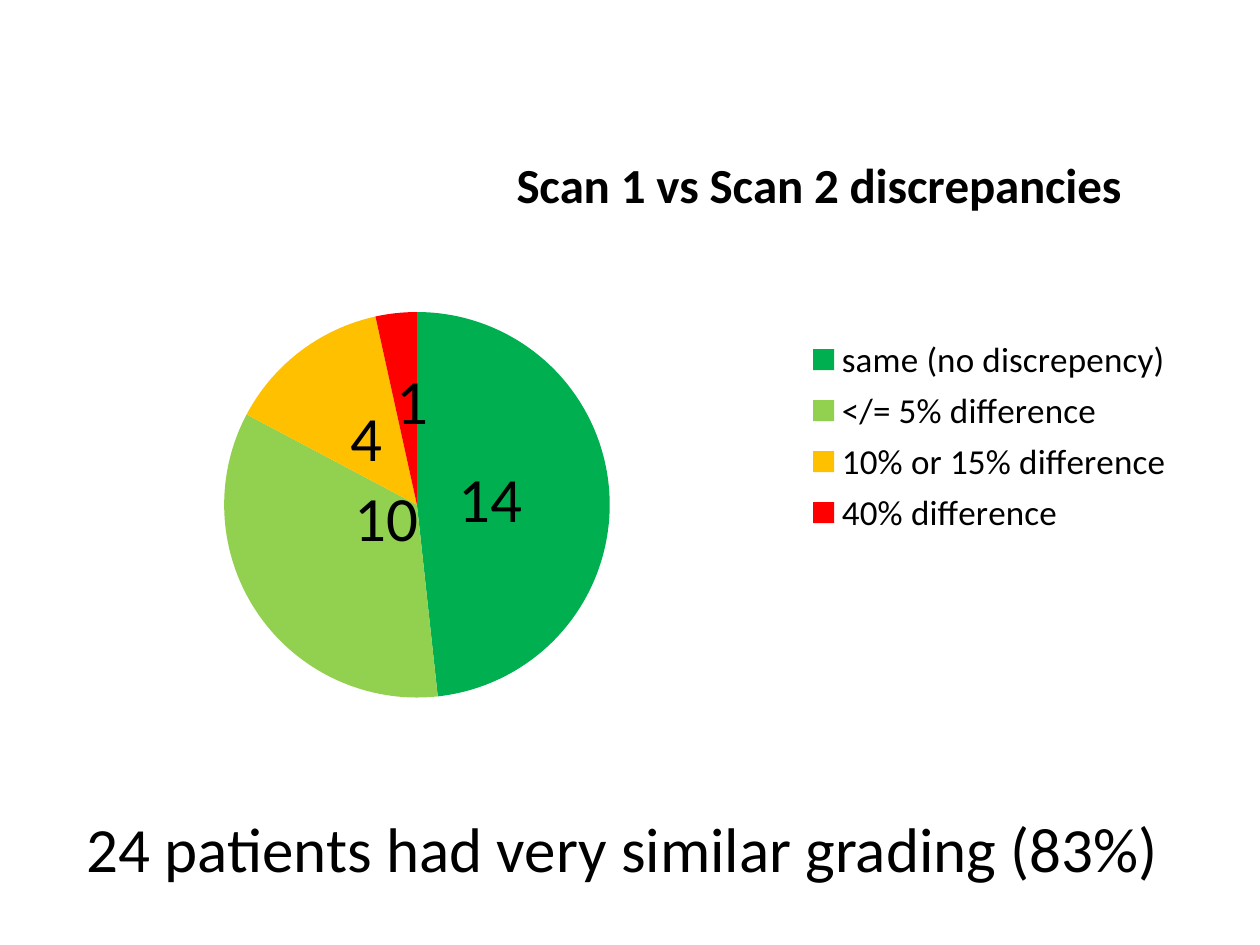
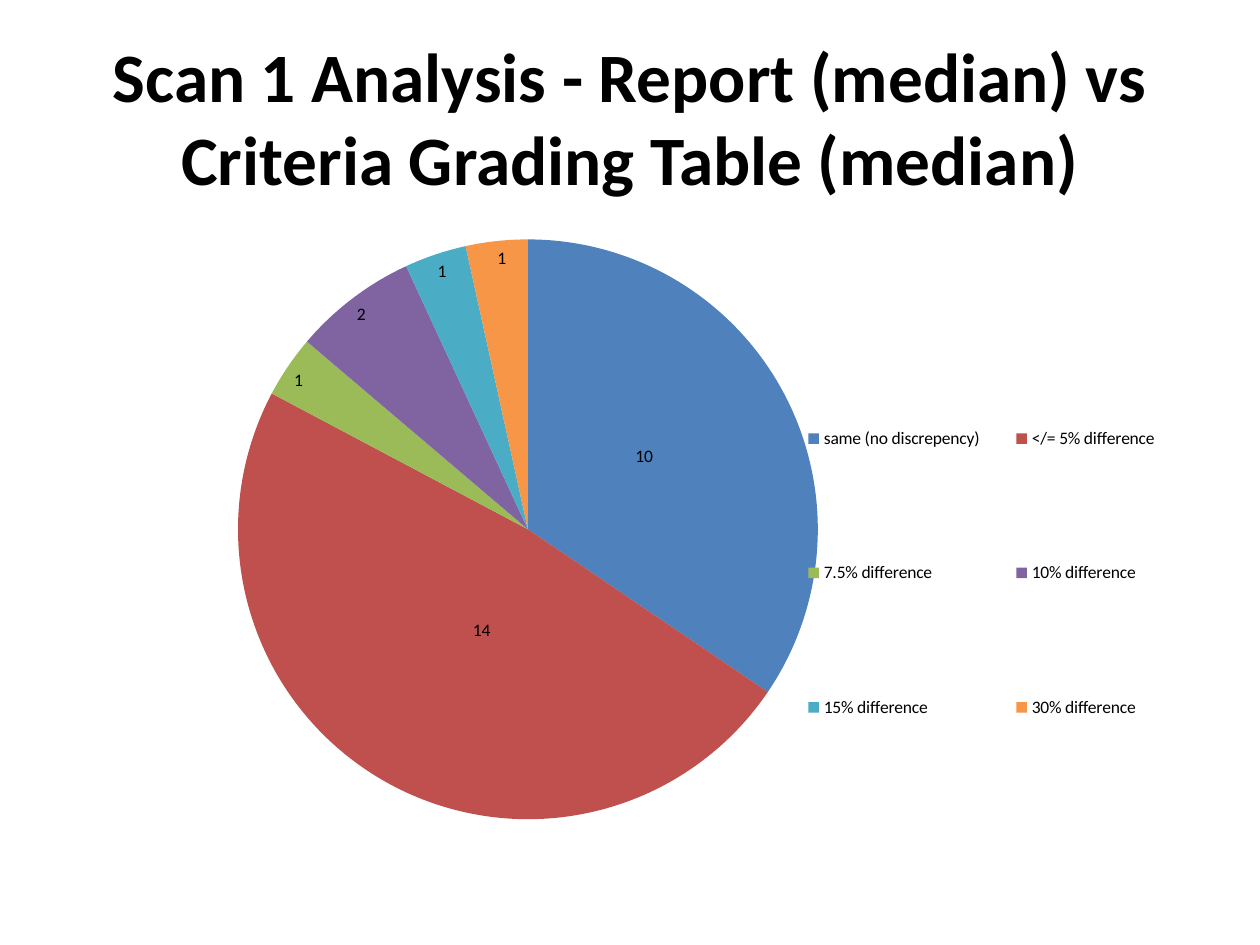
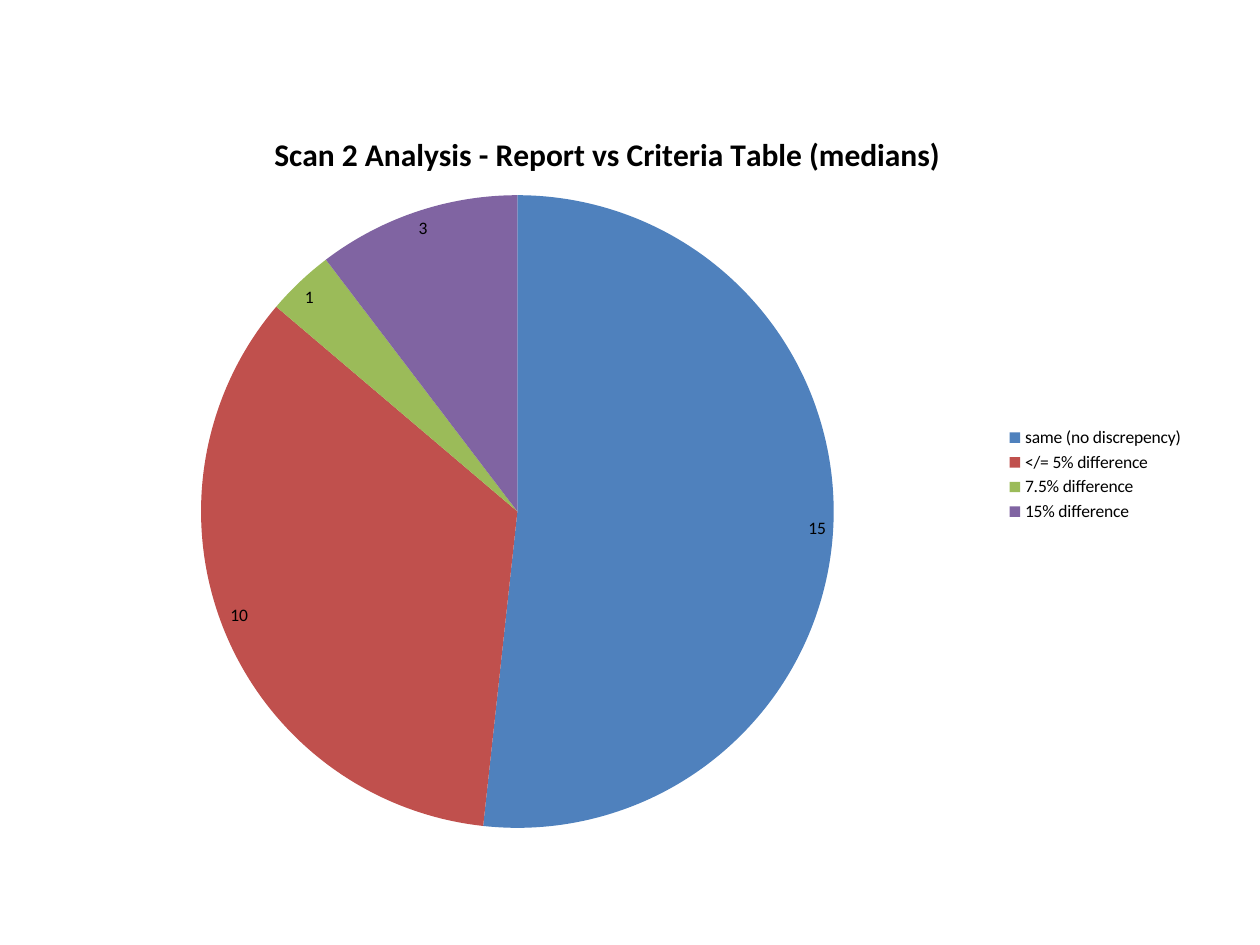
from lxml import etree
from pptx import Presentation
from pptx import util as u
from pptx.chart.data import CategoryChartData
from pptx.dml.color import RGBColor
from pptx.enum import chart as charts, text
from pptx.oxml.ns import qn

FONT = "Calibri"
BLACK = RGBColor(0x00, 0x00, 0x00)
TRAFFIC_LIGHT = [
    RGBColor(0x00, 0xB0, 0x50), RGBColor(0x92, 0xD0, 0x50),
    RGBColor(0xFF, 0xC0, 0x00), RGBColor(0xFF, 0x00, 0x00),
]
ACCENTS = [
    RGBColor(0x4F, 0x81, 0xBD), RGBColor(0xC0, 0x50, 0x4D),
    RGBColor(0x9B, 0xBB, 0x59), RGBColor(0x80, 0x64, 0xA2),
    RGBColor(0x4B, 0xAC, 0xC6), RGBColor(0xF7, 0x96, 0x46),
]
SAME, WITHIN_5 = "same (no discrepency)", "</= 5% difference"

# Boxes are in cm; chart layouts and label shifts are fractions of the chart
SLIDES = [
    dict(
        heading=("24 patients had very similar grading (83%)", 36, False),
        heading_box=(1.12, 15.49, 22.86, 3.18),
        chart_box=(1.09, 2.51, 22.86, 12.57),
        title=("Scan 1 vs Scan 2 discrepancies", 28),
        title_layout=(0.4, 0.03),
        values={SAME: 14, WITHIN_5: 10, "10% or 15% difference": 4,
                "40% difference": 1},
        colours=TRAFFIC_LIGHT, label_size=36, legend_size=20,
        pie_layout=(0.15, 0.3, 0.34, 0.62),
        legend_layout=(0.66, 0.33, 0.33, 0.34),
        label_shifts=[(-0.07, 0.01), (0.08, -0.08), (0.04, 0.07), (0, 0.07)],
    ),
    dict(
        heading=("Scan 1 Analysis - Report (median) vs "
                 "Criteria Grading Table (median)", 39.6, True),
        heading_box=(1.27, 0.76, 22.86, 3.18),
        chart_box=(1.27, 4.45, 22.86, 12.57),
        values={SAME: 10, WITHIN_5: 14, "7.5% difference": 1,
                "10% difference": 2, "15% difference": 1, "30% difference": 1},
        colours=ACCENTS, label_size=10, legend_size=10,
        pie_layout=(0.15, 0.03, 0.52, 0.93),
        legend_layout=(0.63, 0.15, 0.36, 0.83),
        label_shifts=[(-0.11, 0.08), (0.08, -0.21)],
    ),
    dict(
        chart_box=(0.51, 2.13, 23.62, 14.88),
        title=("Scan 2 Analysis - Report vs Criteria Table (medians) ", 18),
        values={SAME: 15, WITHIN_5: 10, "7.5% difference": 1,
                "15% difference": 3},
        colours=ACCENTS, label_size=10, legend_size=10,
        pie_layout=(0.15, 0.12, 0.54, 0.86),
    ),
]


def style(font, size, bold=False):
    font.name, font.size, font.bold = FONT, u.Pt(size), bold
    font.color.rgb = BLACK


def set_layout(element, position, fractions, edge=True, inner=False):
    """Give a chart part a manual layout as its child number `position`."""
    for old in element.findall(qn("c:layout")):
        element.remove(old)
    layout = etree.Element(qn("c:layout"))
    manual = etree.SubElement(layout, qn("c:manualLayout"))
    settings = [("layoutTarget", "inner")] if inner else []
    if edge:
        settings += [("xMode", "edge"), ("yMode", "edge")]
    settings += zip("xywh", fractions)
    for name, value in settings:
        etree.SubElement(manual, qn("c:" + name)).set("val", str(value))
    element.insert(position, layout)


presentation = Presentation()
presentation.slide_width, presentation.slide_height = u.Cm(25.4), u.Cm(19.05)

for content in SLIDES:
    slide = presentation.slides.add_slide(presentation.slide_layouts[6])

    # Heading
    if "heading" in content:
        wording, size, bold = content["heading"]
        heading = slide.shapes.add_textbox(*map(u.Cm, content["heading_box"]))
        frame = heading.text_frame
        frame.word_wrap = True
        frame.vertical_anchor = text.MSO_ANCHOR.MIDDLE
        paragraph = frame.paragraphs[0]
        paragraph.alignment = text.PP_ALIGN.CENTER
        run = paragraph.add_run()
        run.text = wording
        style(run.font, size, bold)

    # Pie chart
    data = CategoryChartData()
    data.categories = list(content["values"])
    data.add_series("Series 1", list(content["values"].values()))
    chart = slide.shapes.add_chart(
        charts.XL_CHART_TYPE.PIE, *map(u.Cm, content["chart_box"]), data).chart
    style(chart.font, 10)
    plot = chart.plots[0]
    plot.vary_by_categories = True
    series = plot.series[0]
    for index in range(len(content["values"])):
        fill = series.points[index].format.fill
        fill.solid()
        fill.fore_color.rgb = content["colours"][index]
    plot_area = chart._chartSpace.chart.plotArea
    set_layout(plot_area, 0, content["pie_layout"], inner=True)

    # Chart title
    chart.has_title = "title" in content
    if chart.has_title:
        wording, size = content["title"]
        title = chart.chart_title
        run = title.text_frame.paragraphs[0].add_run()
        run.text = wording
        style(run.font, size, bold=True)
        title.include_in_layout = False
        if "title_layout" in content:
            set_layout(title._element, 1, content["title_layout"])

    # Legend
    chart.has_legend = True
    legend = chart.legend
    legend.position = charts.XL_LEGEND_POSITION.RIGHT
    legend.include_in_layout = False
    style(legend.font, content["legend_size"])
    if "legend_layout" in content:
        set_layout(legend._element, 1, content["legend_layout"])

    # Value labels, some shifted from the inside end of their slice
    labels = series.data_labels
    labels.show_value = True
    labels.position = charts.XL_LABEL_POSITION.INSIDE_END
    style(labels.font, content["label_size"])
    for index, shift in enumerate(content.get("label_shifts", [])):
        label = series.points[index].data_label
        label.position = charts.XL_LABEL_POSITION.INSIDE_END
        style(label.font, content["label_size"])
        set_layout(labels._element.findall(qn("c:dLbl"))[index], 1, shift,
                   edge=False)

presentation.save("out.pptx")
